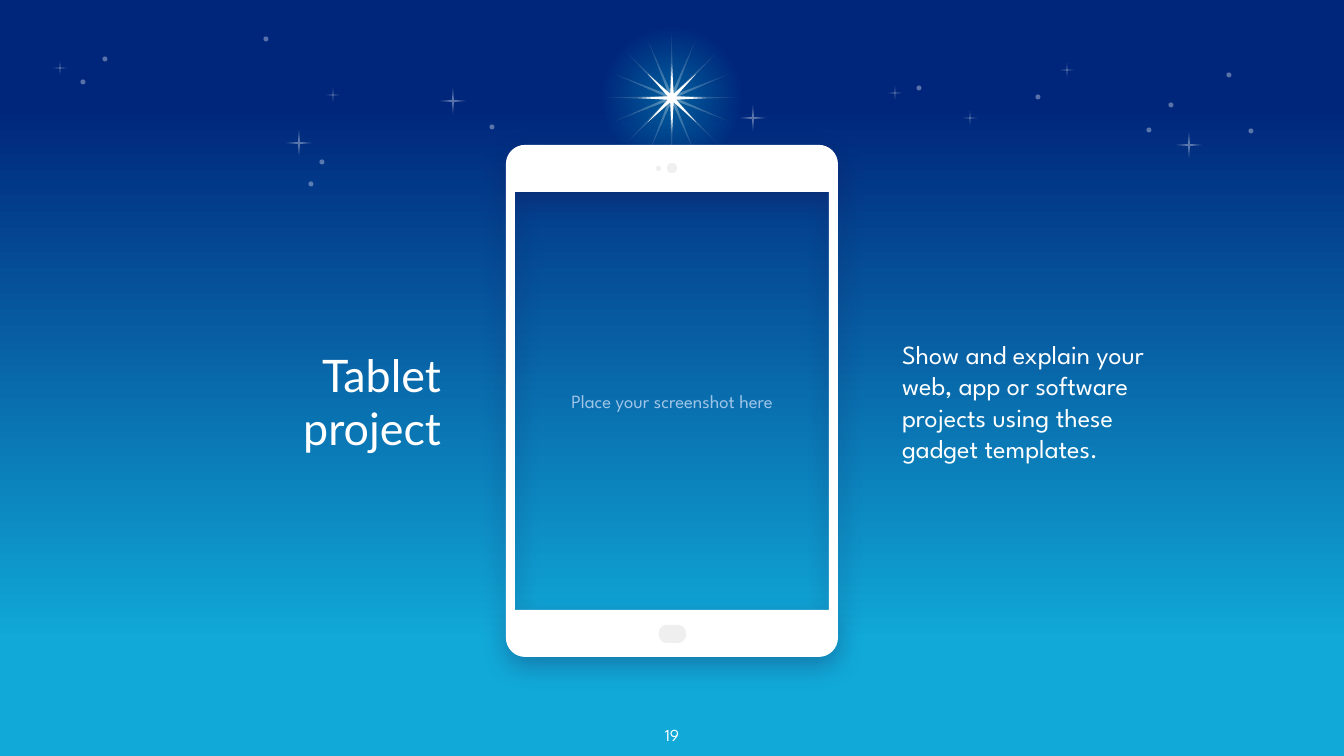
import math

from lxml import etree
from pptx import Presentation
from pptx.dml.color import RGBColor
from pptx.enum.shapes import MSO_SHAPE
from pptx.enum.text import MSO_ANCHOR, MSO_AUTO_SIZE, PP_ALIGN
from pptx.oxml.ns import qn
from pptx.util import Emu, Pt

OVAL, STAR_8, STAR_16 = MSO_SHAPE.OVAL, MSO_SHAPE.STAR_8_POINT, MSO_SHAPE.STAR_16_POINT
LEFT, CENTER, RIGHT = PP_ALIGN.LEFT, PP_ALIGN.CENTER, PP_ALIGN.RIGHT
TOP, MIDDLE = MSO_ANCHOR.TOP, MSO_ANCHOR.MIDDLE
NO_AUTOFIT = MSO_AUTO_SIZE.NONE

EMU_PER_PX = 914400 / 134.4
WHITE, DEVICE_GREY, HINT_BLUE = "FFFFFF", "EFEFEF", "9FC5E8"
BODY_FONT, TITLE_FONT = "League Spartan", "Lato"

# Gradient stops: position %, colour, opacity %
SKY = [(0, "00267B", 100), (14, "00267B", 100), (85, "10A9D8", 100), (100, "10A9D8", 100)]
HALO = [(0, "00FFFF", 27), (68, "00FFFF", 0), (100, "00FFFF", 0)]
RAYS = [(0, WHITE, 35), (69, WHITE, 0), (100, WHITE, 0)]

# Centres of the small sky objects
LARGE_SPARKLES = [(1189, 145), (753, 118), (299, 143), (453, 101)]
SMALL_SPARKLES = [(60, 68), (1067, 70), (895, 93), (970, 118), (333, 95)]
DOTS = [(1251, 131), (775, 148), (1149, 130), (1171, 105), (1229, 75), (1038, 97), (919, 88),
        (322, 162), (311, 184), (492, 127), (266, 39), (105, 59), (83, 82)]
SKY_OPACITY = 35


def px(value):
    return Emu(round(value * EMU_PER_PX))


def rgb(color):
    return RGBColor.from_string(color)


def add_color(parent, color, opacity):
    node = etree.SubElement(parent, qn("a:srgbClr"), {"val": color})
    etree.SubElement(node, qn("a:alpha"), {"val": str(opacity * 1000)})


def fill_gradient(fill, owner, stops, radial=False):
    fill.gradient()
    gradient = next(owner.iter(qn("a:gradFill")))
    for child in list(gradient):
        gradient.remove(child)
    stop_list = etree.SubElement(gradient, qn("a:gsLst"))
    for position, color, opacity in stops:
        stop = etree.SubElement(stop_list, qn("a:gs"), {"pos": str(position * 1000)})
        add_color(stop, color, opacity)
    if radial:
        circle = etree.SubElement(gradient, qn("a:path"), {"path": "circle"})
        middle = {side: "50000" for side in "ltrb"}
        etree.SubElement(circle, qn("a:fillToRect"), middle)
    else:
        etree.SubElement(gradient, qn("a:lin"), {"ang": "5400000", "scaled": "0"})


def paint(shape, color=WHITE, opacity=100):
    shape.shadow.inherit = False
    shape.line.fill.background()
    shape.fill.solid()
    shape.fill.fore_color.rgb = rgb(color)
    if opacity < 100:
        node = next(shape._element.spPr.iter(qn("a:srgbClr")))
        etree.SubElement(node, qn("a:alpha"), {"val": str(opacity * 1000)})


def add_centred(slide, preset, center, size, adjustment=None):
    x, y = center
    shape = slide.shapes.add_shape(preset, px(x - size / 2), px(y - size / 2), px(size), px(size))
    if adjustment is not None:
        shape.adjustments[0] = adjustment
    return shape


def add_outline(slide, *contours):
    contours = [[(px(x), px(y)) for x, y in contour] for contour in contours]
    builder = slide.shapes.build_freeform(*contours[0][0], scale=1.0)
    for index, contour in enumerate(contours):
        if index:
            builder.move_to(*contour[0])
        builder.add_line_segments(contour[1:], close=True)
    return builder.convert_to_shape()


def add_sparkle(slide, center, radius):
    x, y = center
    points = []
    for step in range(8):
        reach = radius * 0.11 if step % 2 else radius
        angle = math.radians(45 * step - 90)
        points.append((x + reach * math.cos(angle), y + reach * math.sin(angle)))
    paint(add_outline(slide, points), WHITE, SKY_OPACITY)


def rounded_contour(left, top, width, height, radius, steps=8):
    right, bottom = left + width - radius, top + height - radius
    left, top = left + radius, top + radius
    corners = [(right, bottom), (left, bottom), (left, top), (right, top)]
    points = []
    for quarter, (x, y) in enumerate(corners):
        for step in range(steps + 1):
            angle = math.pi / 2 * (quarter + step / steps)
            points.append((x + radius * math.cos(angle), y + radius * math.sin(angle)))
    return points


def add_soft_shadow(shape):
    effects = shape._element.spPr.find(qn("a:effectLst"))
    shadow = etree.SubElement(effects, qn("a:outerShdw"), {
        "blurRad": str(Pt(13.5)), "dist": str(Pt(4.5)), "dir": "5400000",
        "algn": "bl", "rotWithShape": "0"})
    add_color(shadow, "20124D", 30)


def write_text(shape, text, size, font=BODY_FONT, color=WHITE, align=CENTER, anchor=MIDDLE, inset=0):
    frame = shape.text_frame
    margins = {f"margin_{side}": px(inset) for side in ("left", "top", "right", "bottom")}
    settings = {"word_wrap": True, "auto_size": NO_AUTOFIT, "vertical_anchor": anchor, **margins}
    for name, value in settings.items():
        setattr(frame, name, value)
    paragraph = frame.paragraphs[0]
    paragraph.text = text
    properties = paragraph._p.get_or_add_pPr()
    properties.set("marL", "0")
    properties.set("indent", "0")
    etree.SubElement(properties, qn("a:buNone"))
    paragraph.alignment = align
    paragraph.space_before = Pt(0)
    for run in paragraph.runs:
        for name, value in {"size": Pt(size), "name": font}.items():
            setattr(run.font, name, value)
        run.font.color.rgb = rgb(color)


def add_label(slide, box, text, size, **style):
    write_text(slide.shapes.add_textbox(*map(px, box)), text, size, inset=13, **style)


def fill_placeholder(placeholder, box, text, size, **style):
    for name, value in zip(("left", "top", "width", "height"), box):
        setattr(placeholder, name, px(value))
    write_text(placeholder, text, size, **style)


def add_night_sky(slide):
    for center in LARGE_SPARKLES:
        add_sparkle(slide, center, 13)
    for center in DOTS:
        paint(add_centred(slide, OVAL, center, 5), WHITE, SKY_OPACITY)
    for center in SMALL_SPARKLES:
        add_sparkle(slide, center, 7)


def add_guiding_star(slide):
    center = (672, 98)
    for preset, stops, adjustment in ((OVAL, HALO, None), (STAR_16, RAYS, 0.055)):
        glow = add_centred(slide, preset, center, 146, adjustment)
        paint(glow)
        fill_gradient(glow.fill, glow._element.spPr, stops, radial=True)
    paint(add_centred(slide, STAR_8, center, 68, 0.067))


def add_tablet(slide):
    screen = [(829, 192), (829, 610), (515, 610), (515, 192)]
    body = add_outline(slide, screen, rounded_contour(506, 145, 332, 512, 19))
    paint(body)
    add_soft_shadow(body)
    # Home button, sensor and camera
    for box in ((659, 625, 27, 18, 8), (656, 166, 5, 5, 2.5), (667, 163, 10, 10, 5)):
        paint(add_outline(slide, rounded_contour(*box)), DEVICE_GREY)


def main():
    deck = Presentation()
    deck.slide_width, deck.slide_height = px(1344), px(756)
    slide = deck.slides.add_slide(deck.slide_layouts[1])

    # Sky
    fill_gradient(slide.background.fill, slide._element, SKY)
    add_night_sky(slide)
    add_guiding_star(slide)

    # Page number and tablet
    add_label(slide, (632, 712, 80, 39), "19", 9, anchor=TOP)
    add_label(slide, (515, 192, 314, 418), "Place your screenshot here", 10, color=HINT_BLUE)
    add_tablet(slide)

    # Title and explanation
    fill_placeholder(slide.shapes.title, (206, 133, 235, 536), "Tablet\vproject", 24,
                     font=TITLE_FONT, align=RIGHT)
    fill_placeholder(slide.placeholders[1], (902, 133, 245, 536),
                     "Show and explain your web, app or software projects using these gadget templates.",
                     14, align=LEFT)

    deck.save("out.pptx")


if __name__ == "__main__":
    main()
